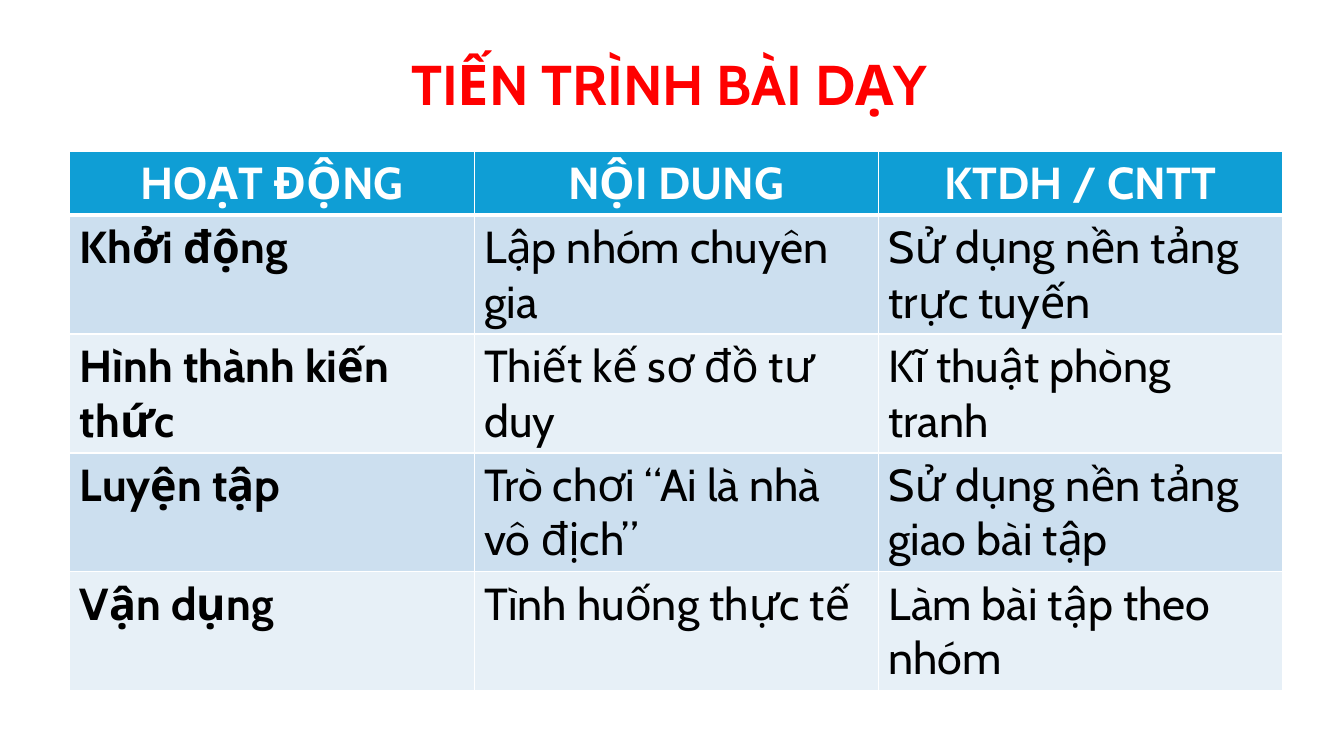
from lxml import etree
from pptx import Presentation, util as u
from pptx.dml.color import RGBColor
from pptx.enum import text
from pptx.oxml import ns

SLIDE_W, SLIDE_H = u.Inches(13.33), u.Inches(7.5)
FONT = "Cabin"
RED = RGBColor(0xFF, 0x00, 0x00)
BLACK = RGBColor(0x00, 0x00, 0x00)
WHITE = RGBColor(0xFF, 0xFF, 0xFF)
HEADER_BLUE = RGBColor(0x0F, 0x9E, 0xD5)
BANDS = (RGBColor(0xCC, 0xDF, 0xEF), RGBColor(0xE7, 0xF0, 0xF7))

HEADING = "TIẾN TRÌNH BÀI DẠY"
LESSON_STEPS = (
    ("HOẠT ĐỘNG", "NỘI DUNG", "KTDH / CNTT"),
    ("Khởi động", "Lập nhóm chuyên gia", "Sử dụng nền tảng trực tuyến"),
    ("Hình thành kiến thức", "Thiết kế sơ đồ tư duy", "Kĩ thuật phòng tranh"),
    ("Luyện tập", "Trò chơi “Ai là nhà vô địch”", "Sử dụng nền tảng giao bài tập"),
    ("Vận dụng", "Tình huống thực tế", "Làm bài tập theo nhóm"),
)
COLUMN_W = u.Inches(4.01)
HEADER_H, STEP_H = u.Inches(0.63), u.Inches(1.18)


def write(frame, words, color, align, **font_format):
    """Fill a text frame with one formatted paragraph."""
    paragraph = frame.paragraphs[0]
    paragraph.alignment = align
    run = paragraph.add_run()
    run.text = words
    run.font.color.rgb = color
    for attribute, value in {"name": FONT, **font_format}.items():
        setattr(run.font, attribute, value)


def add_heading(slide):
    heading = slide.shapes.title
    place = {"left": 0.103 * SLIDE_W, "top": 0.059 * SLIDE_H,
             "width": 0.79 * SLIDE_W, "height": 0.103 * SLIDE_H}
    for attribute, value in place.items():
        setattr(heading, attribute, int(value))
    frame = heading.text_frame
    frame.word_wrap = True
    frame.auto_size = text.MSO_AUTO_SIZE.SHAPE_TO_FIT_TEXT
    write(frame, HEADING, RED, text.PP_ALIGN.CENTER, size=u.Pt(40), bold=True)


def set_borders(cell, top, bottom):
    """Draw white cell borders; top and bottom widths are in points."""
    properties = cell._tc.get_or_add_tcPr()
    for side, width in {"L": 1, "R": 1, "T": top, "B": bottom}.items():
        line = etree.SubElement(properties, ns.qn(f"a:ln{side}"), w=str(u.Pt(width)))
        fill = etree.SubElement(line, ns.qn("a:solidFill"))
        etree.SubElement(fill, ns.qn("a:srgbClr"), val=str(WHITE))


def format_cell(cell, words, row, column):
    is_header = row == 0
    set_borders(cell, top=3 if row == 1 else 1, bottom=3 if is_header else 1)
    cell.fill.solid()
    cell.fill.fore_color.rgb = HEADER_BLUE if is_header else BANDS[(row - 1) % 2]
    write(cell.text_frame, words,
          WHITE if is_header else BLACK,
          text.PP_ALIGN.CENTER if is_header else text.PP_ALIGN.LEFT,
          size=u.Pt(32), bold=is_header or column == 0)


def add_lesson_table(slide):
    rows, columns = len(LESSON_STEPS), len(LESSON_STEPS[0])
    lesson = slide.shapes.add_table(
        rows, columns, int(0.052 * SLIDE_W), int(0.2 * SLIDE_H),
        columns * COLUMN_W, HEADER_H + (rows - 1) * STEP_H).table
    for column in lesson.columns:
        column.width = COLUMN_W
    for row, step in enumerate(LESSON_STEPS):
        lesson.rows[row].height = STEP_H if row else HEADER_H
        for column, words in enumerate(step):
            format_cell(lesson.cell(row, column), words, row, column)


def main():
    deck = Presentation()
    deck.slide_width, deck.slide_height = SLIDE_W, SLIDE_H
    slide = deck.slides.add_slide(deck.slide_layouts.get_by_name("Title Only"))
    # Heading above the table of lesson steps
    add_heading(slide)
    add_lesson_table(slide)
    deck.save("out.pptx")


if __name__ == "__main__":
    main()
